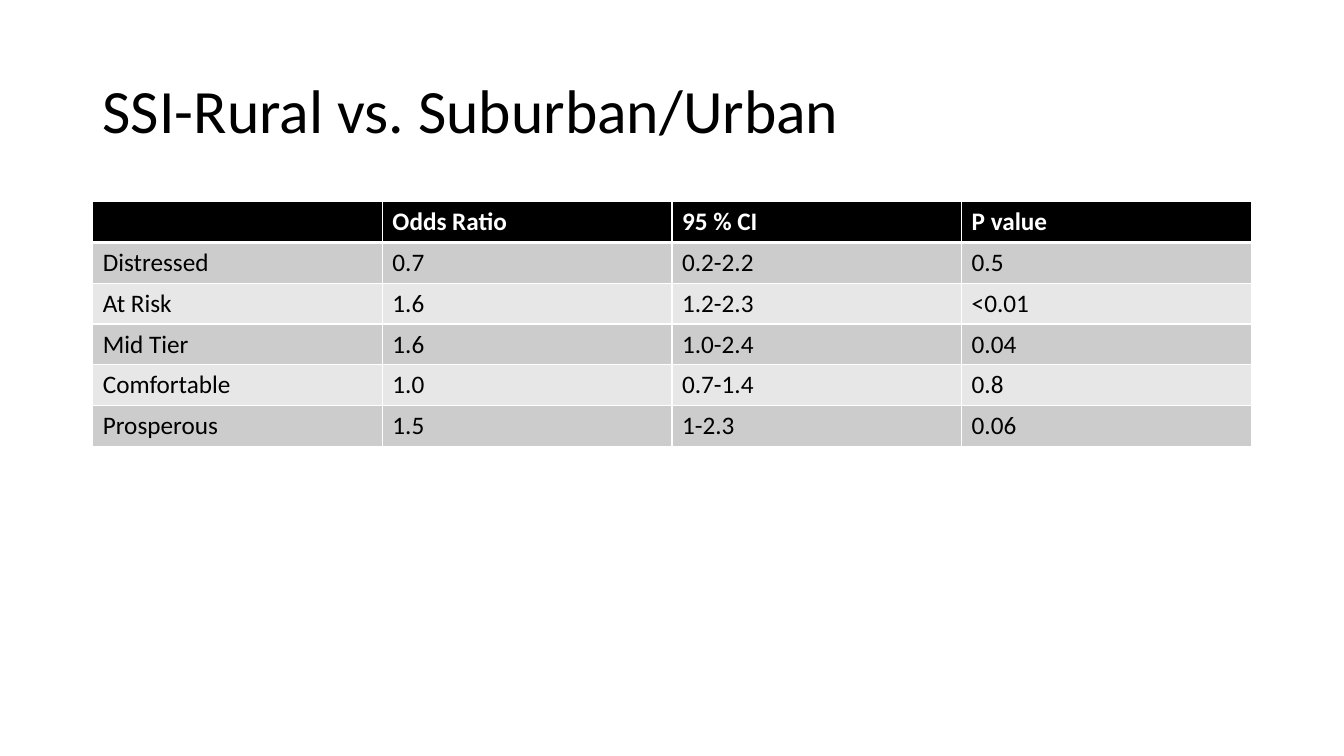
from pptx import Presentation
from pptx.dml.color import RGBColor
from pptx.enum.text import MSO_ANCHOR
from pptx.oxml.ns import qn
from pptx.util import Inches, Pt
from lxml import etree

MIDDLE = MSO_ANCHOR.MIDDLE
FONT = "Calibri"
COLORS = {"ink": "000000", "paper": "FFFFFF", "odd": "CCCCCC", "even": "E7E7E7"}
ROWS = [
    ["", "Odds Ratio", "95 % CI", "P value"],
    ["Distressed", "0.7", "0.2-2.2", "0.5"],
    ["At Risk", "1.6", "1.2-2.3", "<0.01"],
    ["Mid Tier", "1.6", "1.0-2.4", "0.04"],
    ["Comfortable", "1.0", "0.7-1.4", "0.8"],
    ["Prosperous", "1.5", "1-2.3", "0.06"],
]


def style_text(para, size, color, bold=False):
    para.font.name = FONT
    para.font.size = Pt(size)
    para.font.bold = bold
    para.font.color.rgb = RGBColor.from_string(COLORS[color])


def add_border(cell, side, width):
    """Draw one side (L, R, T or B) in white; call before the cell's fill is set."""
    line = etree.SubElement(cell._tc.get_or_add_tcPr(), qn(f"a:ln{side}"), w=str(Pt(width)))
    fill = etree.SubElement(line, qn("a:solidFill"))
    etree.SubElement(fill, qn("a:srgbClr"), val=COLORS["paper"])


deck = Presentation()
deck.slide_width = Inches(13.33)
deck.slide_height = Inches(7.5)
page = deck.slides.add_slide(deck.slide_layouts[6])

left = Inches(0.92)
content_width = deck.slide_width - 2 * left

title_box = page.shapes.add_textbox(left, Inches(0.4), content_width, Inches(1.45))
title_frame = title_box.text_frame
title_frame.word_wrap = True
title_frame.vertical_anchor = MIDDLE
title = title_frame.paragraphs[0]
title.text = "SSI-Rural vs. Suburban/Urban"
title.line_spacing = 0.9
style_text(title, 44, "ink")

table_height = deck.slide_height * 0.324
table = page.shapes.add_table(
    len(ROWS), len(ROWS[0]), left, Inches(2), content_width, int(table_height)
).table

for row_index, values in enumerate(ROWS):
    header = row_index == 0
    fill_color = "ink" if header else "odd" if row_index % 2 else "even"
    for column_index, value in enumerate(values):
        cell = table.cell(row_index, column_index)
        cell.text = value
        style_text(cell.text_frame.paragraphs[0], 18, "paper" if header else "ink", header)
        add_border(cell, "L", 1)
        add_border(cell, "R", 1)
        add_border(cell, "T", 3 if row_index == 1 else 1)
        add_border(cell, "B", 3 if header else 1)
        cell.fill.solid()
        cell.fill.fore_color.rgb = RGBColor.from_string(COLORS[fill_color])

deck.save("out.pptx")
